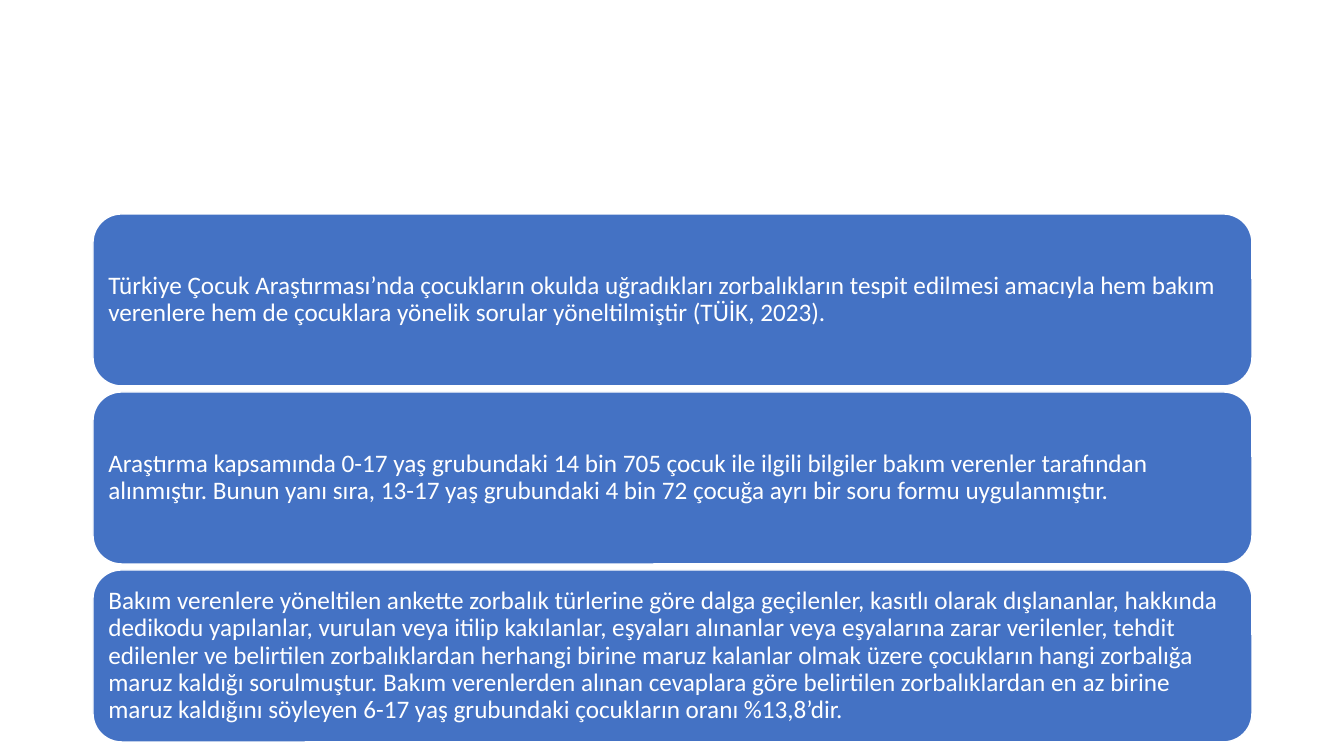
from pptx import Presentation
from pptx.dml.color import RGBColor
from pptx.enum.shapes import MSO_SHAPE
from pptx.enum.text import MSO_ANCHOR, PP_ALIGN
from pptx.util import Pt

PX = 914400 / 100.8
THEME = {
    "fill": RGBColor(0x44, 0x72, 0xC4),
    "white": RGBColor(0xFF, 0xFF, 0xFF),
    "font": "Calibri",
    "size": Pt(18),
    "line": Pt(1),
}


def px(n):
    return round(n * PX)


# Slide
deck = Presentation()
deck.slide_width, deck.slide_height = px(1344), px(756)
slide = deck.slides.add_slide(deck.slide_layouts[6])

# Survey statements, one per panel
facts = [
    "Türkiye Çocuk Araştırması’nda çocukların okulda uğradıkları zorbalıkların "
    "tespit edilmesi amacıyla hem bakım verenlere hem de çocuklara yönelik "
    "sorular yöneltilmiştir (TÜİK, 2023).",
    "Araştırma kapsamında 0-17 yaş grubundaki 14 bin 705 çocuk ile ilgili "
    "bilgiler bakım verenler tarafından alınmıştır. Bunun yanı sıra, 13-17 yaş "
    "grubundaki 4 bin 72 çocuğa ayrı bir soru formu uygulanmıştır.",
    "Bakım verenlere yöneltilen ankette zorbalık türlerine göre dalga "
    "geçilenler, kasıtlı olarak dışlananlar, hakkında dedikodu yapılanlar, "
    "vurulan veya itilip kakılanlar, eşyaları alınanlar veya eşyalarına zarar "
    "verilenler, tehdit edilenler ve belirtilen zorbalıklardan herhangi birine "
    "maruz kalanlar olmak üzere çocukların hangi zorbalığa maruz kaldığı "
    "sorulmuştur. Bakım verenlerden alınan cevaplara göre belirtilen "
    "zorbalıklardan en az birine maruz kaldığını söyleyen 6-17 yaş grubundaki "
    "çocukların oranı %13,8’dir.",
]

# Stacked panels
LEFT, TOP, WIDTH, HEIGHT, GAP = 93, 214, 1159, 172, 6
for i, fact in enumerate(facts):
    top = TOP + i * (HEIGHT + GAP)
    panel = slide.shapes.add_shape(
        MSO_SHAPE.ROUNDED_RECTANGLE, px(LEFT), px(top), px(WIDTH), px(HEIGHT))
    panel.shadow.inherit = False
    panel.fill.solid()
    panel.fill.fore_color.rgb = THEME["fill"]
    panel.line.color.rgb = THEME["white"]
    panel.line.width = THEME["line"]

    # Panel text; the preset's own text area is already inset by 8 px
    frame = panel.text_frame
    frame.word_wrap = True
    frame.vertical_anchor = MSO_ANCHOR.MIDDLE
    frame.margin_left = frame.margin_right = px(7)
    frame.margin_top = frame.margin_bottom = px(7)
    para = frame.paragraphs[0]
    para.alignment = PP_ALIGN.LEFT
    para.line_spacing = 0.9
    run = para.add_run()
    run.text = fact
    run.font.name = THEME["font"]
    run.font.size = THEME["size"]
    run.font.color.rgb = THEME["white"]

deck.save("out.pptx")
